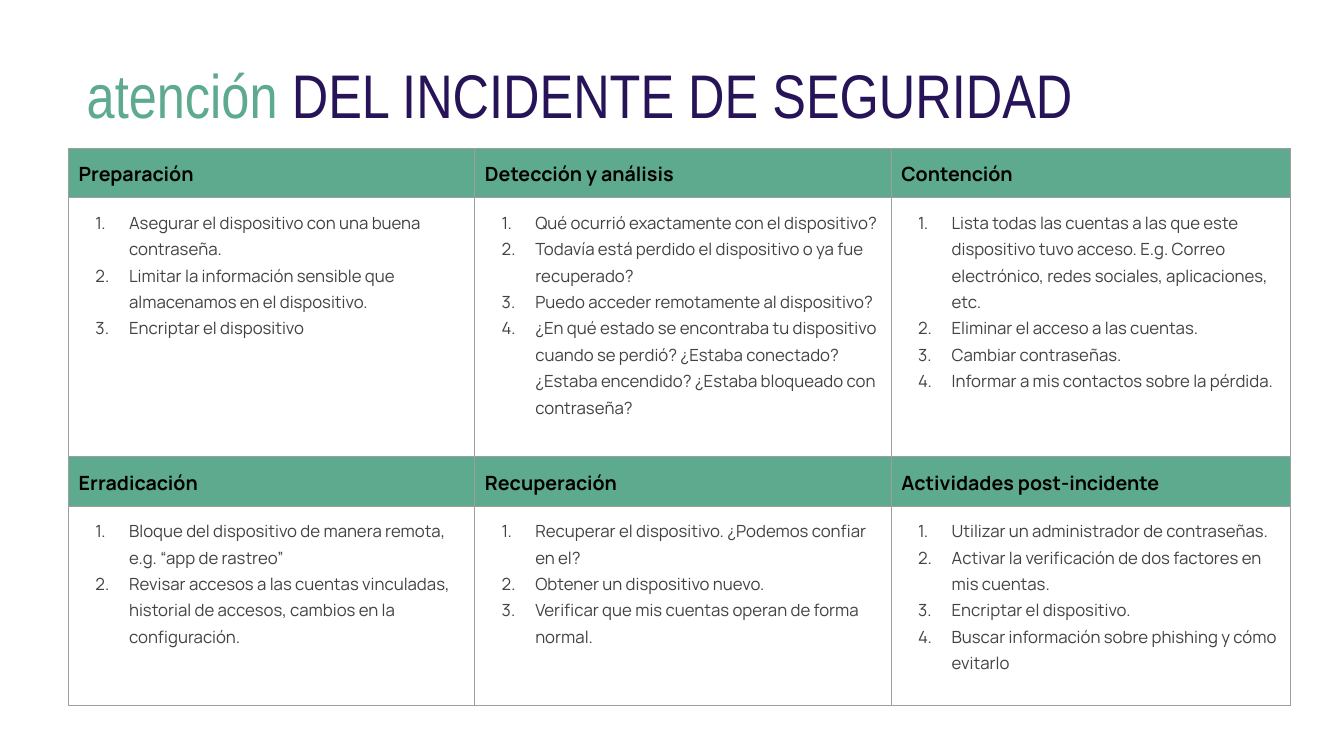
from lxml import etree
from pptx import Presentation
from pptx.dml.color import RGBColor
from pptx.enum.text import MSO_ANCHOR, MSO_AUTO_SIZE, PP_ALIGN
from pptx.oxml.ns import qn
from pptx.util import Pt

MIDDLE = MSO_ANCHOR.MIDDLE
TOP = MSO_ANCHOR.TOP
NO_AUTOFIT = MSO_AUTO_SIZE.NONE
LEFT = PP_ALIGN.LEFT

GREEN = "5EAA8F"
NAVY = "271357"
BLACK = "000000"
GRAY = "424242"
BORDER = "9E9E9E"
TITLE_FONT = "Arial Narrow"
BODY_FONT = "Manrope"

COLUMN_WIDTHS = [290.2, 297.4, 285]
HEADING_HEIGHT = 34.56
STEP_HEIGHTS = [185.2, 142.6]

PHASES = [
    [
        ("Preparación", [
            "Asegurar el dispositivo con una buena contraseña.",
            "Limitar la información sensible que almacenamos en el dispositivo.",
            "Encriptar el dispositivo",
        ]),
        ("Detección y análisis", [
            "Qué ocurrió exactamente con el dispositivo?",
            "Todavía está perdido el dispositivo o ya fue recuperado?",
            "Puedo acceder remotamente al dispositivo?",
            "¿En qué estado se encontraba tu dispositivo cuando se perdió? "
            "¿Estaba conectado? ¿Estaba encendido? ¿Estaba bloqueado con contraseña?",
        ]),
        ("Contención", [
            "Lista todas las cuentas a las que este dispositivo tuvo acceso. "
            "E.g. Correo electrónico, redes sociales, aplicaciones, etc.",
            "Eliminar el acceso a las cuentas.",
            "Cambiar contraseñas.",
            "Informar a mis contactos sobre la pérdida.",
        ]),
    ],
    [
        ("Erradicación", [
            "Bloque del dispositivo de manera remota, e.g. “app de rastreo”",
            "Revisar accesos a las cuentas vinculadas, historial de accesos, "
            "cambios en la configuración.",
        ]),
        ("Recuperación", [
            "Recuperar el dispositivo. ¿Podemos confiar en el?",
            "Obtener un dispositivo nuevo.",
            "Verificar que mis cuentas operan de forma normal.",
        ]),
        ("Actividades post-incidente", [
            "Utilizar un administrador de contraseñas.",
            "Activar la verificación de dos factores en mis cuentas.",
            "Encriptar el dispositivo.",
            "Buscar información sobre phishing y cómo evitarlo",
        ]),
    ],
]


def color(value):
    return RGBColor.from_string(value)


def add_solid(parent, tag, value):
    holder = etree.SubElement(parent, qn(tag))
    etree.SubElement(holder, qn("a:srgbClr"), val=value)


class SlideBuilder:
    def __init__(self, slide):
        self.slide = slide

    def run(self, paragraph, text, font, size, hue, bold=False):
        run = paragraph.add_run()
        run.text = text
        run.font.name = font
        run.font.size = Pt(size)
        run.font.bold = bold
        run.font.color.rgb = color(hue)

    def title(self, left, top, width, height, parts):
        title = self.slide.shapes.title
        title.left, title.top = Pt(left), Pt(top)
        title.width, title.height = Pt(width), Pt(height)
        frame = title.text_frame
        frame.auto_size = NO_AUTOFIT
        frame.word_wrap = True
        frame.vertical_anchor = MIDDLE
        heading = frame.paragraphs[0]
        heading.alignment = LEFT
        heading.line_spacing = 0.9
        for text, hue in parts:
            self.run(heading, text, TITLE_FONT, 44, hue)

    def borders(self, cell):
        properties = cell._tc.get_or_add_tcPr()
        for index, side in enumerate(["a:lnL", "a:lnR", "a:lnT", "a:lnB"]):
            line = etree.Element(qn(side), w=str(Pt(0.75)))
            add_solid(line, "a:solidFill", BORDER)
            properties.insert(index, line)

    def cell(self, cell, fill=None):
        cell.margin_left = cell.margin_right = Pt(7.2)
        cell.margin_top = cell.margin_bottom = Pt(7.2)
        cell.vertical_anchor = TOP
        if fill:
            cell.fill.solid()
            cell.fill.fore_color.rgb = color(fill)
        else:
            cell.fill.background()
        self.borders(cell)

    def heading(self, cell, text):
        self.cell(cell, GREEN)
        paragraph = cell.text_frame.paragraphs[0]
        paragraph.line_spacing = 1.08
        self.run(paragraph, text, BODY_FONT, 14, BLACK, True)

    def steps(self, cell, steps):
        self.cell(cell)
        frame = cell.text_frame
        for index, step in enumerate(steps):
            paragraph = frame.add_paragraph() if index else frame.paragraphs[0]
            properties = paragraph._p.get_or_add_pPr()
            properties.set("marL", str(Pt(36)))
            properties.set("indent", str(Pt(-24)))
            add_solid(properties, "a:buClr", GRAY)
            etree.SubElement(properties, qn("a:buFont"), typeface=BODY_FONT)
            etree.SubElement(properties, qn("a:buAutoNum"), type="arabicPeriod")
            paragraph.line_spacing = 1.15
            self.run(paragraph, step, BODY_FONT, 12, GRAY)

    def phase_table(self, left, top, phases):
        heights = [h for steps in STEP_HEIGHTS for h in (HEADING_HEIGHT, steps)]
        table = self.slide.shapes.add_table(
            len(heights), len(COLUMN_WIDTHS), Pt(left), Pt(top),
            Pt(sum(COLUMN_WIDTHS)), Pt(sum(heights))).table
        table.first_row = False
        table.horz_banding = False
        for column, width in zip(table.columns, COLUMN_WIDTHS):
            column.width = Pt(width)
        for row, height in zip(table.rows, heights):
            row.height = Pt(height)
        for band, group in enumerate(phases):
            for column, (name, steps) in enumerate(group):
                self.heading(table.cell(2 * band, column), name)
                self.steps(table.cell(2 * band + 1, column), steps)


def main():
    deck = Presentation()
    deck.slide_width, deck.slide_height = Pt(960), Pt(540)
    builder = SlideBuilder(deck.slides.add_slide(deck.slide_layouts[5]))
    builder.title(54.7, 18, 843.8, 104.4, [
        ("atención", GREEN),
        (" DEL INCIDENTE DE SEGURIDAD", NAVY),
    ])
    builder.phase_table(49, 106, PHASES)
    deck.save("out.pptx")


if __name__ == "__main__":
    main()
